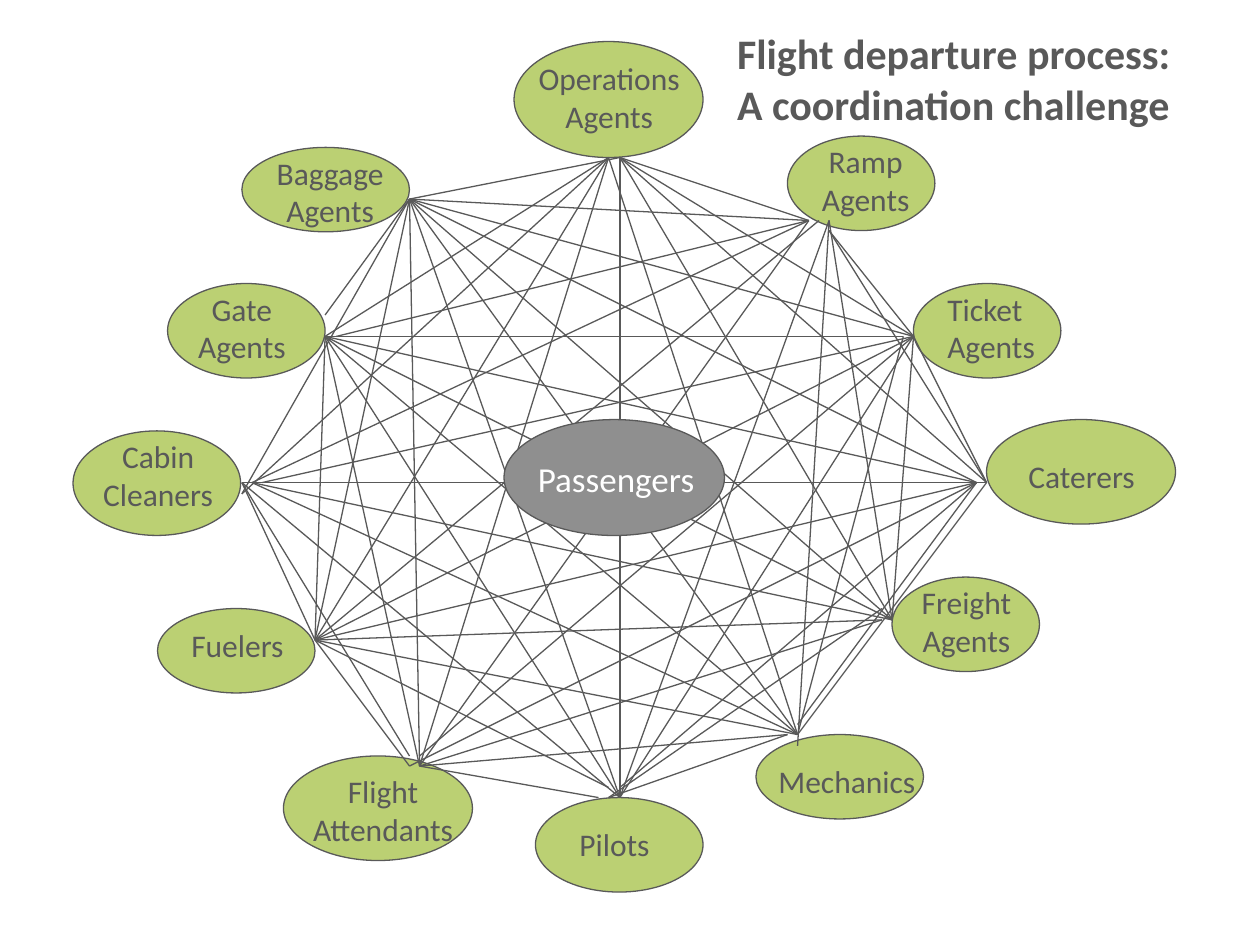
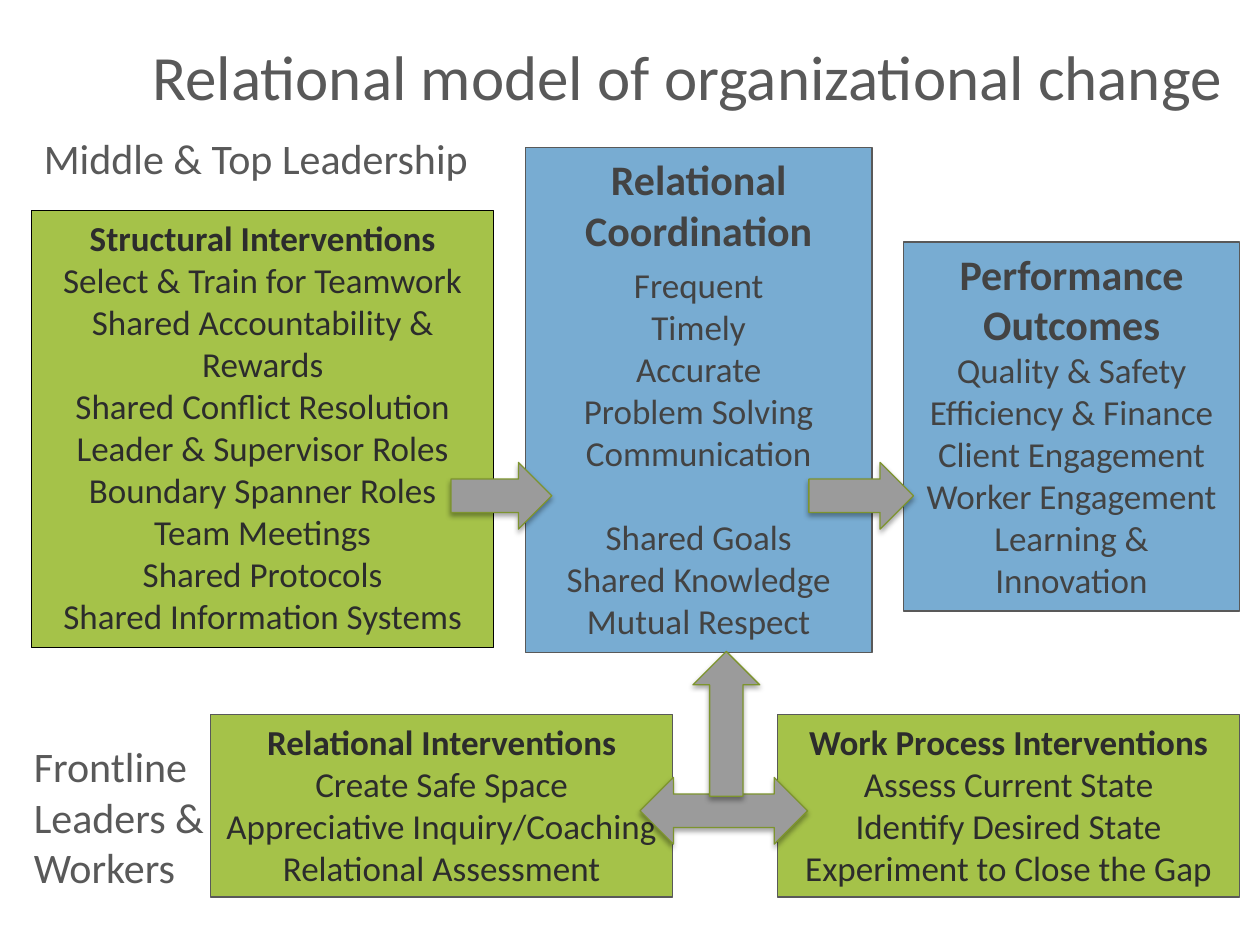
from itertools import combinations

from lxml.etree import SubElement
from pptx import Presentation
from pptx.dml.color import RGBColor
from pptx.enum.shapes import MSO_CONNECTOR, MSO_SHAPE
from pptx.enum.text import MSO_ANCHOR, MSO_AUTO_SIZE, PP_ALIGN
from pptx.oxml.ns import qn
from pptx.util import Inches, Pt

FONT = "Calibri"
GREY, WHITE, BLACK = "595959", "FFFFFF", "000000"
LIME, HUB_GREY = "BBD073", "8F8F8F"
GREEN, GREEN_TEXT = "A5C249", "2C2C2C"
BLUE, BLUE_TEXT = "78ACD2", "434343"
ARROW, ARROW_LINE = "9B9B9B", "7D942E"
LEFT, CENTER, RIGHT = PP_ALIGN.LEFT, PP_ALIGN.CENTER, PP_ALIGN.RIGHT

# name: (ellipse box, label box, label alignment, line anchor)
GROUPS = {
    "Operations Agents": ((4.08, 0.33, 1.5, 0.92), (4.17, 0.42, 1.33, 0.7), CENTER, (4.92, 1.25)),
    "Ramp Agents": ((6.25, 1.08, 1.17, 0.75), (6.33, 1.08, 1.08, 0.7), CENTER, (6.58, 1.75)),
    "Ticket Agents": ((7.25, 2.25, 1.17, 0.75), (7.42, 2.25, 1, 0.7), LEFT, (7.25, 2.67)),
    "Caterers": ((7.83, 3.33, 1.5, 0.83), (8, 3.58, 1.17, 0.4), CENTER, (7.83, 3.83)),
    "Freight Agents": ((7.08, 4.58, 1.17, 0.75), (7.17, 4.58, 1, 0.7), CENTER, (7.08, 4.92)),
    "Mechanics": ((6, 5.83, 1.33, 0.67), (6.08, 6, 1.33, 0.4), LEFT, (6.33, 5.83)),
    "Pilots": ((4.25, 6.33, 1.33, 0.75), (4.5, 6.5, 0.92, 0.4), LEFT, (4.92, 6.33)),
    "Flight Attendants": ((2.25, 6, 1.5, 0.83), (2.33, 6.08, 1.42, 0.7), CENTER, (3.33, 6.08)),
    "Fuelers": ((1.25, 4.83, 1.25, 0.67), (1.42, 4.92, 1, 0.4), LEFT, (2.5, 5.08)),
    "Cabin Cleaners": ((0.58, 3.42, 1.33, 0.83), (0.67, 3.42, 1.17, 0.7), CENTER, (1.92, 3.83)),
    "Gate Agents": ((1.33, 2.25, 1.25, 0.75), (1.42, 2.25, 1, 0.7), CENTER, (2.58, 2.67)),
    "Baggage Agents": ((1.92, 1.17, 1.33, 0.67), (2.08, 1.17, 1.08, 0.7), CENTER, (3.25, 1.58)),
}
UNLINKED = ("Cabin Cleaners", "Gate Agents")

# group: {line end: first words of the groups whose lines use it}
OTHER_ENDS = {
    "Operations Agents": {(4.83, 1.25): "Mechanics Flight Fuelers Cabin Gate"},
    "Ramp Agents": {(6.42, 1.75): "Operations Flight Cabin Gate Baggage",
                    (6.5, 1.75): "Fuelers", (6.58, 1.83): "Ticket Caterers"},
    "Ticket Agents": {(7.17, 2.67): "Mechanics Gate"},
    "Caterers": {(7.75, 3.83): "Mechanics Pilots Flight Fuelers Gate Baggage"},
    "Freight Agents": {(7.08, 4.83): "Caterers Mechanics", (7, 4.83): "Pilots",
                       (7, 4.92): "Flight Fuelers"},
    "Mechanics": {(6.33, 5.92): "Ramp", (6.33, 5.75): "Caterers",
                  (6.25, 5.83): "Pilots Flight"},
    "Pilots": {(4.92, 6.25): "Caterers", (4.83, 6.25): "Fuelers",
               (4.83, 6.33): "Freight Mechanics", (4.75, 6.33): "Flight"},
    "Flight Attendants": {(3.33, 6): "Ticket", (3.25, 6): "Cabin",
                          (3.25, 6.08): "Caterers Fuelers"},
    "Cabin Cleaners": {(1.92, 3.92): "Operations Baggage", (2, 3.83): "Ramp Freight Mechanics",
                       (2.08, 3.83): "Ticket"},
    "Gate Agents": {(2.58, 2.5): "Baggage", (2.67, 2.67): "Ramp"},
}

# box, fill, line, text colour, heading size, heading, lines
PANELS = [
    ((4.17, 1.17, 2.75, 4.01), BLUE, GREY, BLUE_TEXT, 24, "Relational Coordination",
     ["Frequent", "Timely", "Accurate", "Problem Solving", "Communication",
      "Shared Goals", "Shared Knowledge", "Mutual Respect"]),
    ((1.67, 5.67, 3.67, 1.45), GREEN, GREY, GREEN_TEXT, 20, "Relational Interventions",
     ["Create Safe Space", "Appreciative Inquiry/Coaching", "Relational Assessment"]),
    ((0.25, 1.67, 3.67, 3.47), GREEN, BLACK, GREEN_TEXT, 20, "Structural Interventions",
     ["Select & Train for Teamwork", "Shared Accountability & Rewards",
      "Shared Conflict Resolution", "Leader & Supervisor Roles", "Boundary Spanner Roles",
      "Team Meetings", "Shared Protocols", "Shared Information Systems"]),
    ((7.17, 1.92, 2.67, 2.93), BLUE, GREY, BLUE_TEXT, 24, "Performance Outcomes",
     ["Quality & Safety", "Efficiency & Finance", "Client Engagement",
      "Worker Engagement", "Learning & Innovation"]),
    ((6.17, 5.67, 3.67, 1.45), GREEN, GREY, GREEN_TEXT, 20, "Work Process Interventions",
     ["Assess Current State", "Identify Desired State", "Experiment to Close the Gap"]),
]
SPACE_BEFORE = {"Frequent": 5, "Shared Goals": 24}
ARROWS = [
    (MSO_SHAPE.RIGHT_ARROW, (3.58, 3.67, 0.8, 0.53)),
    (MSO_SHAPE.LEFT_RIGHT_ARROW, (5.08, 6.17, 1.33, 0.53)),
    (MSO_SHAPE.UP_ARROW, (5.5, 5.17, 0.53, 1.15)),
    (MSO_SHAPE.RIGHT_ARROW, (6.42, 3.67, 0.83, 0.53)),
]


def rgb(value):
    """Turn a hex string into a colour."""
    return RGBColor.from_string(value)


def inches(values):
    """Convert a sequence of numbers to lengths."""
    return [Inches(v) for v in values]


def write(tf, lines, size, color, align=LEFT, bold=False):
    """Fill a text frame with one paragraph per line in one style."""
    tf.word_wrap = True
    tf.auto_size = MSO_AUTO_SIZE.NONE
    tf.vertical_anchor = MSO_ANCHOR.TOP
    tf.text = "\n".join(lines)
    for p in tf.paragraphs:
        p.alignment = align
        for r in p.runs:
            r.font.name, r.font.size, r.font.bold = FONT, Pt(size), bold
            r.font.color.rgb = rgb(color)


def add_title(s, box, lines, size, align, bold=False):
    """Move the title placeholder to the box and fill it."""
    sp = s.shapes.title
    sp.left, sp.top, sp.width, sp.height = inches(box)
    write(sp.text_frame, lines, size, GREY, align, bold)
    return sp.text_frame


def add_label(s, box, text, size, color=GREY, align=LEFT):
    """Add a text box."""
    write(s.shapes.add_textbox(*inches(box)).text_frame, [text], size, color, align)


def add_figure(s, kind, box, fill, line):
    """Add a preset shape with a fill and a thin outline."""
    sp = s.shapes.add_shape(kind, *inches(box))
    sp.shadow.inherit = False
    sp.fill.solid()
    sp.fill.fore_color.rgb = rgb(fill)
    sp.line.color.rgb = rgb(line)
    sp.line.width = Pt(0.75)
    return sp


def line_end(group, partner):
    """Find where the line from a group to its partner starts."""
    for point, partners in OTHER_ENDS.get(group, {}).items():
        if partner.split()[0] in partners.split():
            return point
    return GROUPS[group][3]


def add_link(s, a, b):
    """Draw the line between two groups."""
    ends = inches(line_end(a, b) + line_end(b, a))
    cxn = s.shapes.add_connector(MSO_CONNECTOR.STRAIGHT, *ends)
    cxn.line.color.rgb = rgb(GREY)
    cxn.line.width = Pt(0.75)
    SubElement(cxn._element.spPr, qn("a:effectLst"))


def add_panel(s, box, fill, line, color, size, heading, lines):
    """Add a box with a bold heading over centred lines."""
    tf = add_figure(s, MSO_SHAPE.RECTANGLE, box, fill, line).text_frame
    write(tf, [heading] + lines, 20, color, CENTER)
    r = tf.paragraphs[0].runs[0]
    r.font.size, r.font.bold = Pt(size), True
    for p in tf.paragraphs:
        if p.text in SPACE_BEFORE:
            p.space_before = Pt(SPACE_BEFORE[p.text])


def add_arrow(s, kind, box):
    """Add a block arrow with a soft shadow below it."""
    sp = add_figure(s, kind, box, ARROW, ARROW_LINE)
    effects = sp._element.spPr.find(qn("a:effectLst"))
    shadow = SubElement(effects, qn("a:outerShdw"), blurRad=str(Pt(3.1)), dist=str(Pt(1.8)),
                        dir="5400000", rotWithShape="0")
    SubElement(SubElement(shadow, qn("a:srgbClr"), val=BLACK), qn("a:alpha"), val="35000")


def build_network(s):
    """Build the slide on which every group is linked to the others."""
    for ellipse, _, _, _ in GROUPS.values():
        add_figure(s, MSO_SHAPE.OVAL, ellipse, LIME, GREY)
    for name, (_, label, align, _) in GROUPS.items():
        add_label(s, label, name, 18, align=align)
    for pair in combinations(GROUPS, 2):
        if pair != UNLINKED:
            add_link(s, *pair)
    add_title(s, (5.75, 0.17, 4.42, 0.91),
              ["Flight departure process:", "A coordination challenge"], 24, LEFT, True)
    add_figure(s, MSO_SHAPE.OVAL, (4, 3.33, 1.75, 0.92), HUB_GREY, GREY)
    add_label(s, (4.17, 3.58, 1.75, 0.44), "Passengers", 20, WHITE)


def build_model(s):
    """Build the slide with panels joined by block arrows."""
    for panel in PANELS:
        add_panel(s, *panel)
    tf = add_title(s, (0.25, 0.17, 9.55, 0.67),
                   ["Relational model of organizational change"], 36, RIGHT)
    tf.margin_top = Inches(0.13)
    for kind, box in ARROWS:
        add_arrow(s, kind, box)
    add_label(s, (0.25, 1, 4.17, 0.5), "Middle & Top Leadership", 24)
    add_label(s, (0.17, 5.83, 1.75, 1.31), "Frontline Leaders & Workers", 24)


def main():
    """Build and save the presentation."""
    prs = Presentation()
    prs.slide_width, prs.slide_height = Inches(10), Inches(7.5)
    for build in (build_network, build_model):
        build(prs.slides.add_slide(prs.slide_layouts[5]))
    prs.save("out.pptx")


if __name__ == "__main__":
    main()
